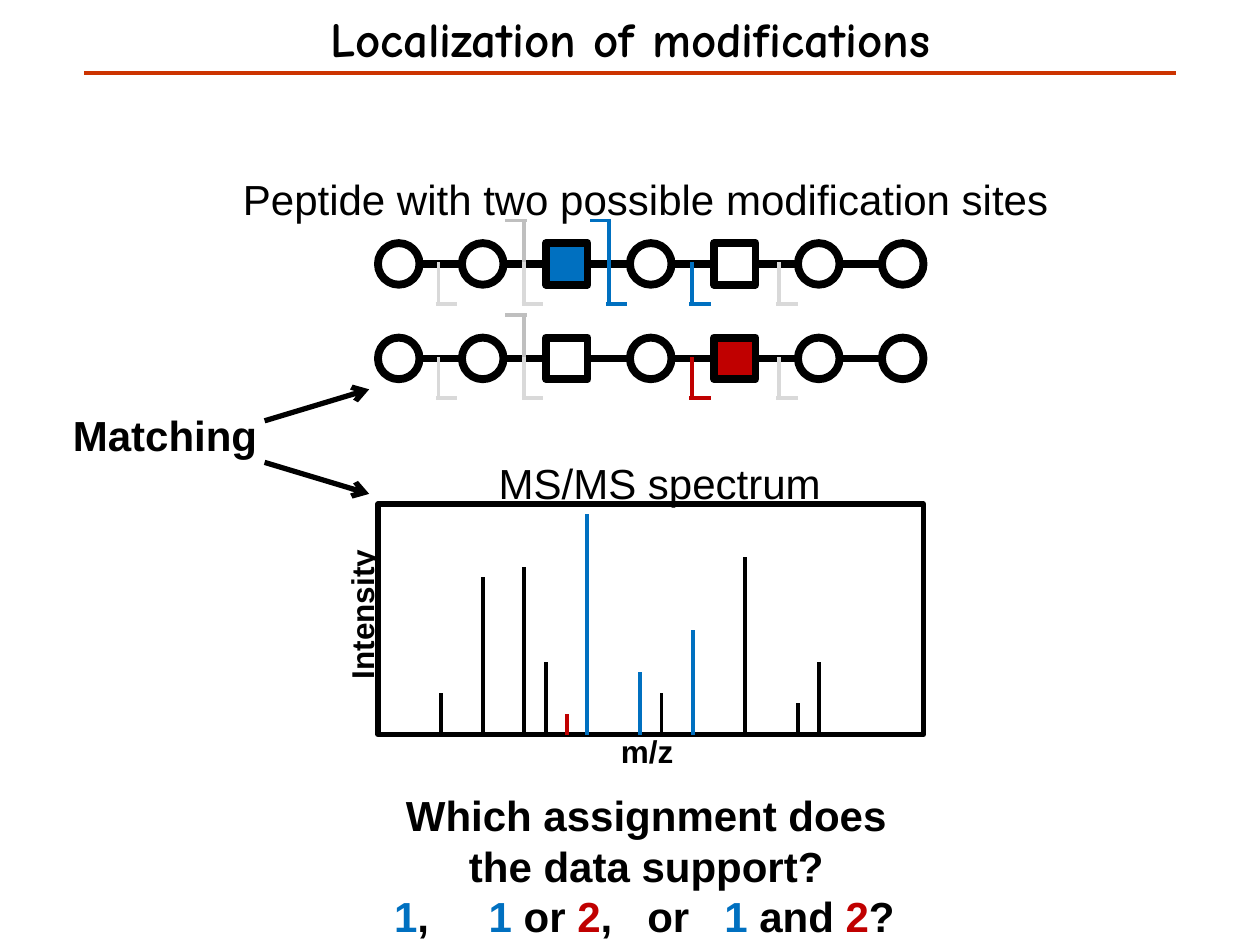
from lxml import etree
from pptx import Presentation
from pptx.dml.color import RGBColor
from pptx.enum.shapes import MSO_CONNECTOR, MSO_SHAPE
from pptx.enum.text import MSO_ANCHOR, PP_ALIGN
from pptx.oxml.ns import qn
from pptx.util import Inches, Pt

STRAIGHT = MSO_CONNECTOR.STRAIGHT
OVAL, RECT = MSO_SHAPE.OVAL, MSO_SHAPE.RECTANGLE
LEFT, CENTER = PP_ALIGN.LEFT, PP_ALIGN.CENTER
TOP = MSO_ANCHOR.TOP
BLACK, WHITE, BLUE, RED = "000000", "FFFFFF", "0070C0", "C00000"
GRAY, PALE, RUST = "BFBFBF", "D9D9D9", "CC3300"
rgb = RGBColor.from_string

deck = Presentation()
deck.slide_width, deck.slide_height = Inches(10), Inches(7.5)
slide = deck.slides.add_slide(deck.slide_layouts[6])
shapes = slide.shapes


def write(rows, x, y, w, h, size=24, font="Arial", bold=False, align=LEFT,
          wrap=False, inset=None, turn=0):
    """Add a text box; each row is a list of (text, colour) runs."""
    box = shapes.add_textbox(Inches(x), Inches(y), Inches(w), Inches(h))
    box.rotation = turn
    frame = box.text_frame
    frame.word_wrap = wrap
    frame.vertical_anchor = TOP
    if inset is not None:
        frame.margin_left = frame.margin_right = Inches(inset)
        frame.margin_top = frame.margin_bottom = Inches(inset)
    for i, row in enumerate(rows):
        para = frame.add_paragraph() if i else frame.paragraphs[0]
        para.alignment = align
        for text, color in row:
            run = para.add_run()
            run.text = text
            run.font.name, run.font.size = font, Pt(size)
            run.font.bold = bold
            run.font.color.rgb = rgb(color)
    return frame


def draw(home, x1, y1, x2, y2, color=BLACK, width=2.25, arrow=False):
    """Add a straight line to the shapes of a slide or group."""
    line = home.add_connector(STRAIGHT, Inches(x1), Inches(y1),
                              Inches(x2), Inches(y2))
    line.line.color.rgb = rgb(color)
    line.line.width = Pt(width)
    props = line._element.spPr
    if arrow:
        ln = props.find(qn("a:ln"))
        etree.SubElement(ln, qn("a:tailEnd")).set("type", "arrow")
    etree.SubElement(props, qn("a:effectLst"))
    return line


write([[("Peptide with two possible modification sites", BLACK)]],
      1.83, 1.33, 6.66, 0.5)

# Peptide residues and spectrum frame
size, pitch, first = 0.33, 2 / 3, 3
tops = [1.93, 2.68]
sites = [{2: BLUE, 4: WHITE}, {2: WHITE, 4: RED}]
boxes = [(RECT if i in site else OVAL, first + i * pitch, top, size, size,
          site.get(i, WHITE), 4.5)
         for top, site in zip(tops, sites) for i in range(7)]
boxes.append((RECT, 3, 4, 4.33, 1.83, WHITE, 3))
made = []
for kind, x, y, w, h, fill, width in boxes:
    shape = shapes.add_shape(kind, Inches(x), Inches(y), Inches(w), Inches(h))
    shape.shadow.inherit = False
    shape.fill.solid()
    shape.fill.fore_color.rgb = rgb(fill)
    shape.line.color.rgb = rgb(BLACK)
    shape.line.width = Pt(width)
    made.append(shape)

# Bonds between residues
for n, (top, site) in enumerate(zip(tops, sites)):
    mid = top + size / 2
    for i in range(6):
        x = first + i * pitch
        bond = draw(shapes, x + size, mid, x + pitch, mid, width=4.5)
        if i in site:
            bond.begin_connect(made[n * 7 + i], 3)
        if i + 1 in site:
            bond.end_connect(made[n * 7 + i + 1], 1)

# Spectrum peaks: m/z position, top, colour
base = 5.83
peaks = [(3.5, 5.5, BLACK), (3.83, 4.58, BLACK), (4.16, 4.5, BLACK),
         (4.33, 5.25, BLACK), (4.5, 5.67, RED), (4.66, 4.08, BLUE),
         (5.08, 5.33, BLUE), (5.25, 5.5, BLACK), (5.5, 5, BLUE),
         (5.91, 4.42, BLACK), (6.33, 5.58, BLACK), (6.5, 5.25, BLACK)]
for x, top, color in peaks:
    draw(shapes, x, base, x, top, color)

write([[("MS/MS spectrum", BLACK)]], 3.86, 3.58, 2.78, 0.5)
write([[("m/z", BLACK)]], 4.83, 5.76, 0.62, 0.4, size=18, bold=True)
write([[("Intensity", BLACK)]], 2.25, 4.67, 1.24, 0.4, size=18, bold=True,
      turn=270)

# Fragment brackets: stem, side (-1 up, 1 down), colour
shared = [(4.16, -1, GRAY), (4.16, 1, PALE), (3.48, 1, PALE), (6.18, 1, PALE)]
marks = [(2.08, shared + [(4.83, -1, BLUE), (4.83, 1, BLUE), (5.49, 1, BLUE)]),
         (2.83, shared + [(5.49, 1, RED)])]
for mid, row in marks:
    for x, side, color in row:
        group = shapes.add_group_shape().shapes
        end = mid + side * 0.33
        draw(group, x, end, x, mid, color)
        draw(group, x - side * 0.02, end, x + side * 0.15, end, color)

write([[("Matching", BLACK)]], 0.48, 3.2, 1.68, 0.5, bold=True)
draw(shapes, 2.1, 3.34, 2.93, 3.09, width=3, arrow=True)
draw(shapes, 2.1, 3.67, 2.93, 3.92, width=3, arrow=True)

# Closing question, with the choices set on tab stops
ask = write([[("Which assignment does", BLACK)],
             [("the data support?", BLACK)],
             [("1", BLUE), (",\t", BLACK), ("1 ", BLUE), ("or ", BLACK),
              ("2", RED), (",\tor\t", BLACK), ("1 ", BLUE), ("and ", BLACK),
              ("2", RED), ("?", BLACK)]],
            3.03, 6.22, 4.2, 1.31, bold=True, align=CENTER, wrap=True)
last = ask.paragraphs[2]
last.alignment = LEFT
tabs = etree.SubElement(last._p.get_or_add_pPr(), qn("a:tabLst"))
for stop in (0.75, 2.01, 2.62):
    tab = etree.SubElement(tabs, qn("a:tab"))
    tab.set("pos", str(Inches(stop)))
    tab.set("algn", "l")

title = write([[("Localization of modifications", BLACK)]], 0, 0.1, 10, 1.4,
              size=28, font="Comic Neue", bold=True, align=CENTER, wrap=True,
              inset=0)
title.paragraphs[0].line_spacing = 0.95
draw(shapes, 0.67, 0.58, 9.33, 0.58, RUST, 2.5)

deck.save("out.pptx")
